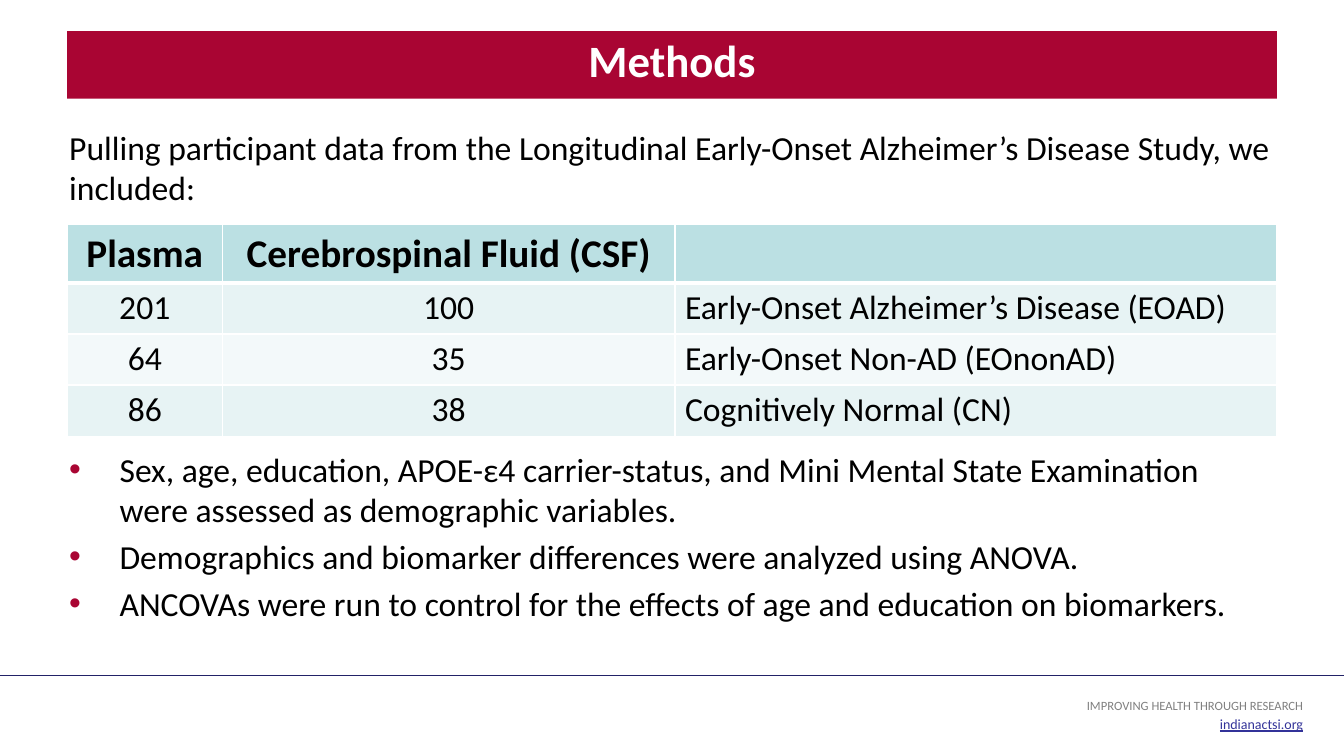
from dataclasses import dataclass

from lxml.etree import SubElement
from pptx import Presentation
from pptx.dml.color import RGBColor
from pptx.enum.shapes import MSO_CONNECTOR
from pptx.enum.text import MSO_ANCHOR, MSO_AUTO_SIZE, PP_ALIGN
from pptx.oxml.ns import qn
from pptx.util import Inches, Pt

SLIDE_WIDTH = Inches(13.33)
SLIDE_HEIGHT = Inches(7.5)
FONT = "Calibri"
CRIMSON = RGBColor(0xA9, 0x05, 0x33)
NAVY = RGBColor(0x22, 0x22, 0x67)
LINK_BLUE = RGBColor(0x33, 0x33, 0x99)
GRAY = RGBColor(0x80, 0x80, 0x80)
BLACK = RGBColor(0, 0, 0)
WHITE = RGBColor(0xFF, 0xFF, 0xFF)
HEADER_TEAL = RGBColor(0xBB, 0xE0, 0xE3)
BAND_TEAL = RGBColor(0xE7, 0xF3, 0xF4)
BAND_PALE = RGBColor(0xF3, 0xF9, 0xFA)


@dataclass(frozen=True)
class Area:
    """A rectangle in percent of the slide's width and height."""
    left: float
    top: float
    width: float
    height: float

    def lengths(self) -> tuple[int, int, int, int]:
        return (across(self.left), down(self.top),
                across(self.width), down(self.height))


@dataclass(frozen=True)
class TextBlock:
    area: Area
    paragraphs: tuple[str, ...]
    size: float = 24
    color: RGBColor = BLACK
    align: PP_ALIGN = PP_ALIGN.LEFT
    bulleted: bool = False
    underline: bool = False


TITLE_AREA = Area(5, 4.13, 90, 8.93)
TABLE_AREA = Area(5, 29.73, 90, 27.6)
FOOTER_LINE_TOP = 89.33
COLUMN_SHARES = (12.83, 37.42, 49.75)
ROW_SHARES = (27.54, 24.15, 24.15, 24.16)
TABLE_ROWS = (
    ("Plasma", "Cerebrospinal Fluid (CSF)", ""),
    ("201", "100", "Early-Onset Alzheimer’s Disease (EOAD)"),
    ("64", "35", "Early-Onset Non-AD (EOnonAD)"),
    ("86", "38", "Cognitively Normal (CN)"),
)
TEXT_BLOCKS = (
    TextBlock(Area(5, 16.6, 90, 11.5), (
        "Pulling participant data from the Longitudinal Early-Onset "
        "Alzheimer’s Disease Study, we included:",)),
    TextBlock(Area(5, 59.2, 90, 26.8), (
        "Sex, age, education, APOE-ε4 carrier-status, and Mini Mental State "
        "Examination were assessed as demographic variables.",
        "Demographics and biomarker differences were analyzed using ANOVA.",
        "ANCOVAs were run to control for the effects of age and education "
        "on biomarkers."), bulleted=True),
    TextBlock(Area(60.5, 92.13, 36.6, 2.27),
              ("IMPROVING HEALTH THROUGH RESEARCH",),
              9, GRAY, PP_ALIGN.RIGHT),
    TextBlock(Area(85.1, 94.53, 12, 2.53), ("indianactsi.org",),
              10, LINK_BLUE, PP_ALIGN.RIGHT, underline=True),
)


def across(percent: float) -> int:
    return round(SLIDE_WIDTH * percent / 100)


def down(percent: float) -> int:
    return round(SLIDE_HEIGHT * percent / 100)


def format_font(font, size: float, color: RGBColor, bold: bool = False) -> None:
    font.name = FONT
    font.size = Pt(size)
    font.bold = bold
    font.color.rgb = color


def prepare_frame(text_frame) -> None:
    text_frame.word_wrap = True
    text_frame.auto_size = MSO_AUTO_SIZE.NONE
    text_frame.vertical_anchor = MSO_ANCHOR.TOP
    text_frame.margin_left = text_frame.margin_right = Inches(0.02)
    text_frame.margin_top = text_frame.margin_bottom = Inches(0.01)


def add_bullet(paragraph) -> None:
    properties = paragraph._p.get_or_add_pPr()
    properties.set("marL", str(Inches(0.5)))
    properties.set("indent", str(-Inches(0.5)))
    bullet_color = SubElement(properties, qn("a:buClr"))
    SubElement(bullet_color, qn("a:srgbClr"), val=str(CRIMSON))
    SubElement(properties, qn("a:buFont"), typeface="Arial")
    SubElement(properties, qn("a:buChar"), char="•")


def add_title(slide) -> None:
    title = slide.shapes.title
    title.left, title.top, title.width, title.height = TITLE_AREA.lengths()
    title.fill.solid()
    title.fill.fore_color.rgb = CRIMSON
    prepare_frame(title.text_frame)
    title.text_frame.text = "Methods"
    paragraph = title.text_frame.paragraphs[0]
    paragraph.alignment = PP_ALIGN.CENTER
    format_font(paragraph.runs[0].font, 32, WHITE, bold=True)


def add_text_block(slide, block: TextBlock) -> None:
    text_frame = slide.shapes.add_textbox(*block.area.lengths()).text_frame
    prepare_frame(text_frame)
    text_frame.text = "\n".join(block.paragraphs)
    for index, paragraph in enumerate(text_frame.paragraphs):
        paragraph.alignment = block.align
        if index:
            paragraph.space_before = Pt(4.8)
        if block.bulleted:
            add_bullet(paragraph)
        font = paragraph.runs[0].font
        format_font(font, block.size, block.color)
        font.underline = block.underline


def add_cell_borders(cell, is_header: bool, below_header: bool) -> None:
    properties = cell._tc.get_or_add_tcPr()
    for side in ("L", "R", "T", "B"):
        thick = (is_header and side == "B") or (below_header and side == "T")
        line = SubElement(properties, qn(f"a:ln{side}"),
                          w=str(Pt(3 if thick else 1)))
        fill = SubElement(line, qn("a:solidFill"))
        SubElement(fill, qn("a:srgbClr"), val=str(WHITE))


def add_participant_table(slide) -> None:
    shape = slide.shapes.add_table(len(TABLE_ROWS), len(COLUMN_SHARES),
                                   *TABLE_AREA.lengths())
    table = shape.table
    for column, share in zip(table.columns, COLUMN_SHARES):
        column.width = across(TABLE_AREA.width * share / 100)
    for row, share in zip(table.rows, ROW_SHARES):
        row.height = down(TABLE_AREA.height * share / 100)
    for row_index, texts in enumerate(TABLE_ROWS):
        is_header = row_index == 0
        band = BAND_TEAL if row_index % 2 else BAND_PALE
        for column_index, text in enumerate(texts):
            cell = table.cell(row_index, column_index)
            add_cell_borders(cell, is_header, row_index == 1)
            cell.fill.solid()
            cell.fill.fore_color.rgb = HEADER_TEAL if is_header else band
            cell.text_frame.text = text
            paragraph = cell.text_frame.paragraphs[0]
            paragraph.alignment = (PP_ALIGN.CENTER if column_index < 2
                                   else PP_ALIGN.LEFT)
            format_font(paragraph.font, 28 if is_header else 24, BLACK, is_header)
            for run in paragraph.runs:
                format_font(run.font, 28 if is_header else 24, BLACK, is_header)


def add_footer_line(slide) -> None:
    top = down(FOOTER_LINE_TOP)
    line = slide.shapes.add_connector(MSO_CONNECTOR.STRAIGHT,
                                      0, top, SLIDE_WIDTH, top)
    line.line.color.rgb = NAVY
    line.line.width = Pt(0.75)
    SubElement(line._element.spPr, qn("a:effectLst"))


def main() -> None:
    presentation = Presentation()
    presentation.slide_width = SLIDE_WIDTH
    presentation.slide_height = SLIDE_HEIGHT
    slide = presentation.slides.add_slide(presentation.slide_layouts[5])
    add_footer_line(slide)
    add_title(slide)
    for block in TEXT_BLOCKS:
        add_text_block(slide, block)
    add_participant_table(slide)
    presentation.save("out.pptx")


if __name__ == "__main__":
    main()
